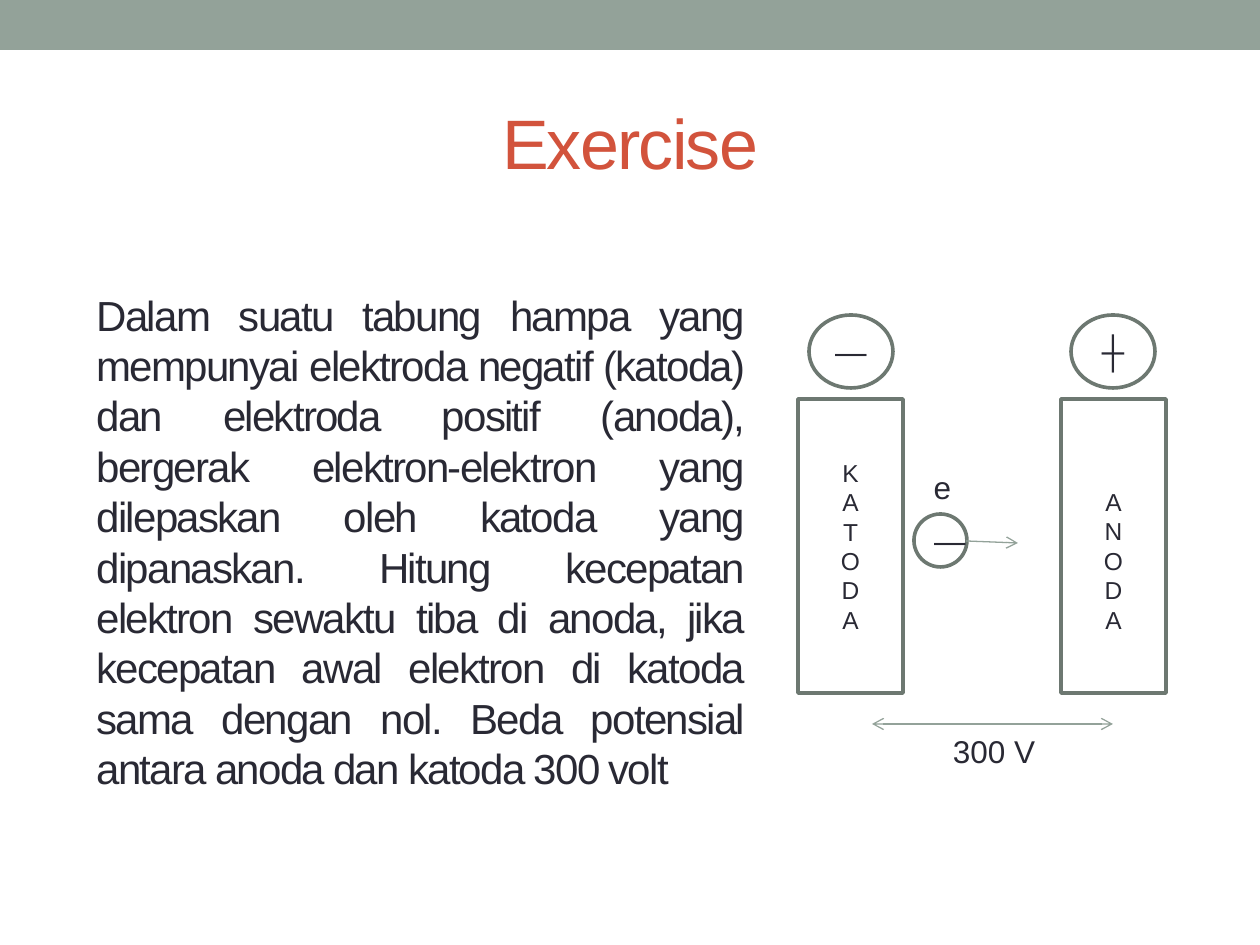
from dataclasses import dataclass

from lxml import etree
from pptx import Presentation
from pptx.dml.color import RGBColor
from pptx.enum.shapes import MSO_CONNECTOR, MSO_SHAPE
from pptx.enum.text import MSO_ANCHOR, MSO_AUTO_SIZE, PP_ALIGN
from pptx.oxml.ns import qn
from pptx.util import Emu, Pt

RECTANGLE, OVAL = MSO_SHAPE.RECTANGLE, MSO_SHAPE.OVAL
STRAIGHT = MSO_CONNECTOR.STRAIGHT
MIDDLE = MSO_ANCHOR.MIDDLE
CENTER, JUSTIFY = PP_ALIGN.CENTER, PP_ALIGN.JUSTIFY
NO_AUTOFIT = MSO_AUTO_SIZE.NONE
EMU_PER_PX = 914400 / 126


@dataclass(frozen=True)
class Theme:
    font: str = "Arial"
    accent: RGBColor = RGBColor(0x93, 0xA2, 0x99)
    outline: RGBColor = RGBColor(0x6D, 0x78, 0x71)
    title: RGBColor = RGBColor(0xD2, 0x53, 0x3C)
    ink: RGBColor = RGBColor(0x29, 0x29, 0x34)
    title_size: int = 40
    body_size: int = 24
    label_size: int = 18
    plate_size: int = 14
    tight_spacing: int = -100
    outline_width: float = 2.08
    arrow_width: float = 0.75


@dataclass(frozen=True)
class Box:
    left: int
    top: int
    width: int
    height: int


@dataclass(frozen=True)
class Figure:
    kind: int
    box: Box
    text: str
    size: int
    inset_top: int = 6


@dataclass(frozen=True)
class Arrow:
    start: tuple[int, int]
    end: tuple[int, int]
    ends: tuple[str, ...]


THEME = Theme()

PROBLEM = (
    "Dalam suatu tabung hampa yang mempunyai elektroda negatif (katoda) dan "
    "elektroda positif (anoda), bergerak elektron-elektron yang dilepaskan oleh "
    "katoda yang dipanaskan. Hitung kecepatan elektron sewaktu tiba di anoda, "
    "jika kecepatan awal elektron di katoda sama dengan nol. Beda potensial "
    "antara anoda dan katoda 300 volt"
)

# The anode lettering sits half a line lower than the cathode lettering
FIGURES = [
    Figure(RECTANGLE, Box(798, 399, 105, 294), "\n".join("KATODA"), THEME.plate_size),
    Figure(RECTANGLE, Box(1061, 399, 105, 294), "\n".join("ANODA"), THEME.plate_size, 35),
    Figure(OVAL, Box(809, 315, 84, 73), "―", THEME.label_size),
    Figure(OVAL, Box(1071, 315, 84, 73), "┼", THEME.label_size),
    Figure(OVAL, Box(914, 514, 53, 53), "―", THEME.label_size),
]
ARROWS = [
    Arrow((966, 541), (1018, 543), ("tailEnd",)),
    Arrow((872, 724), (1113, 724), ("headEnd", "tailEnd")),
]
LABELS = [
    ("300 V", Box(918, 724, 152, 53)),
    ("e", Box(890, 460, 105, 53)),
]


def px(length: int) -> Emu:
    return Emu(round(length * EMU_PER_PX))


def place(box: Box) -> tuple[Emu, Emu, Emu, Emu]:
    return px(box.left), px(box.top), px(box.width), px(box.height)


def write(shape, text: str, size: int, color=THEME.ink, align=CENTER, spacing: int = 0) -> None:
    frame = shape.text_frame
    frame.text = text
    frame.word_wrap = True
    frame.auto_size = NO_AUTOFIT
    frame.vertical_anchor = MIDDLE
    for paragraph in frame.paragraphs:
        paragraph.alignment = align
        paragraph.space_before = Pt(0)
        for span in paragraph.runs:
            span.font.name = THEME.font
            span.font.size = Pt(size)
            span.font.color.rgb = color
            if spacing:
                span.font._element.set("spc", str(spacing))


def fill_placeholder(shape, box: Box, text: str, size: int, **style) -> None:
    shape.left, shape.top, shape.width, shape.height = place(box)
    write(shape, text, size, spacing=THEME.tight_spacing, **style)


def remove_bullets(shape) -> None:
    for paragraph in shape.text_frame.paragraphs:
        properties = paragraph._p.get_or_add_pPr()
        properties.set("marL", "0")
        properties.set("indent", "0")
        etree.SubElement(properties, qn("a:buNone"))


def draw_band(page) -> None:
    band = page.shapes.add_shape(RECTANGLE, *place(Box(0, 0, 1260, 50)))
    band.shadow.inherit = False
    band.fill.solid()
    band.fill.fore_color.rgb = THEME.accent
    band.line.fill.background()


def draw_figure(page, figure: Figure) -> None:
    shape = page.shapes.add_shape(figure.kind, *place(figure.box))
    shape.shadow.inherit = False
    shape.fill.background()
    shape.line.color.rgb = THEME.outline
    shape.line.width = Pt(THEME.outline_width)
    write(shape, figure.text, figure.size)
    shape.text_frame.margin_top = px(figure.inset_top)


def draw_arrow(page, arrow: Arrow) -> None:
    points = [px(value) for value in arrow.start + arrow.end]
    connector = page.shapes.add_connector(STRAIGHT, *points)
    connector.line.color.rgb = THEME.accent
    connector.line.width = Pt(THEME.arrow_width)
    line = connector.line._get_or_add_ln()
    for end in arrow.ends:
        etree.SubElement(line, qn(f"a:{end}"), type="arrow")
    etree.SubElement(connector._element.spPr, qn("a:effectLst"))


def draw_label(page, text: str, box: Box) -> None:
    write(page.shapes.add_textbox(*place(box)), text, THEME.label_size)


def main() -> None:
    deck = Presentation()
    deck.slide_width, deck.slide_height = px(1260), px(945)
    page = deck.slides.add_slide(deck.slide_layouts[1])

    # Top band, title and problem text
    draw_band(page)
    fill_placeholder(page.shapes.title, Box(63, 73, 1134, 136), "Exercise",
                     THEME.title_size, color=THEME.title)
    body = page.placeholders[1]
    fill_placeholder(body, Box(84, 231, 672, 620), PROBLEM, THEME.body_size, align=JUSTIFY)
    remove_bullets(body)

    # Vacuum tube diagram
    for figure in FIGURES:
        draw_figure(page, figure)
    for arrow in ARROWS:
        draw_arrow(page, arrow)
    for text, box in LABELS:
        draw_label(page, text, box)

    deck.save("out.pptx")


if __name__ == "__main__":
    main()
